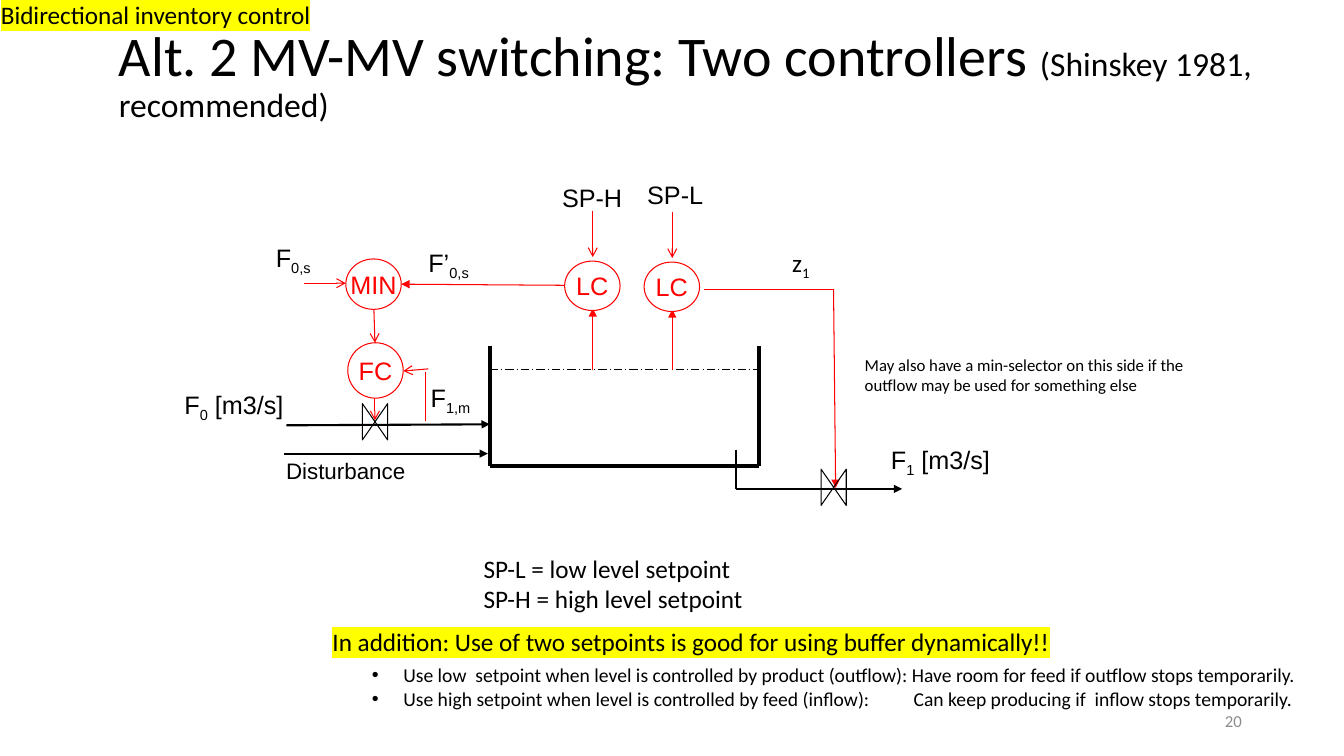
from dataclasses import dataclass

from lxml.etree import SubElement
from pptx import Presentation
from pptx.dml.color import RGBColor
from pptx.enum.dml import MSO_LINE_DASH_STYLE as Dash
from pptx.enum.shapes import MSO_CONNECTOR as Connector, MSO_SHAPE as Shape
from pptx.enum.text import MSO_ANCHOR as Anchor, MSO_AUTO_SIZE as Fit, PP_ALIGN as Align
from pptx.oxml.ns import qn
from pptx.util import Pt

COLORS = {"ink": "000000", "signal": "FF0000", "paper": "FFFFFF",
          "marker": "FFFF00", "number": "8C8C8C"}


@dataclass
class Line:
    points: list[tuple[float, float]]
    color: str = "signal"
    width: float = 0.75
    arrow: str = ""
    dashed: bool = False


@dataclass
class Circle:
    name: str
    left: float
    top: float
    height: float


@dataclass
class Label:
    text: str
    left: float
    top: float
    width: float
    height: float = 29
    size: float = 18
    font: str = "Arial"
    align: Align = Align.LEFT
    wrap: bool = False
    highlight: bool = False


def rgb(name: str) -> RGBColor:
    return RGBColor.from_string(COLORS[name])


def write(para, text: str, size: float = 18, font: str = "Arial",
          color: str = "ink", highlight: bool = False) -> None:
    """Add text to a paragraph; parts between underscores are subscripts."""
    for index, part in enumerate(text.split("_")):
        if not part:
            continue
        span = para.add_run()
        span.text = part
        span.font.size = Pt(size)
        span.font.name = font
        span.font.color.rgb = rgb(color)
        props = span._r.get_or_add_rPr()
        if index % 2:
            props.set("baseline", "-25000")
        if highlight:
            mark = SubElement(props, qn("a:highlight"))
            SubElement(mark, qn("a:srgbClr")).set("val", COLORS["marker"])
            props.find(qn("a:solidFill")).addnext(mark)


def add_box(page, left: float, top: float, width: float, height: float,
            wrap: bool = False, grow: bool = True):
    box = page.shapes.add_textbox(Pt(left), Pt(top), Pt(width), Pt(height))
    frame = box.text_frame
    frame.word_wrap = wrap
    frame.auto_size = Fit.SHAPE_TO_FIT_TEXT if grow else Fit.NONE
    if not grow:
        frame.vertical_anchor = Anchor.MIDDLE
    return frame


def draw_label(page, label: Label) -> None:
    frame = add_box(page, label.left, label.top, label.width, label.height, label.wrap)
    for index, text in enumerate(label.text.split("\n")):
        para = frame.add_paragraph() if index else frame.paragraphs[0]
        para.alignment = label.align
        write(para, text, label.size, label.font, highlight=label.highlight)


def draw_line(page, line: Line) -> None:
    pairs = list(zip(line.points, line.points[1:]))
    for index, (start, end) in enumerate(pairs, 1):
        wire = page.shapes.add_connector(Connector.STRAIGHT, *map(Pt, start + end))
        wire.line.color.rgb = rgb(line.color)
        wire.line.width = Pt(line.width)
        if line.dashed:
            wire.line.dash_style = Dash.LONG_DASH_DOT
        if line.arrow and index == len(pairs):
            SubElement(wire.line._get_or_add_ln(), qn("a:tailEnd")).set("type", line.arrow)
        SubElement(wire._element.spPr, qn("a:effectLst"))


def add_outline(page, kind: Shape, left: float, top: float, width: float,
                height: float, color: str):
    shape = page.shapes.add_shape(kind, Pt(left), Pt(top), Pt(width), Pt(height))
    shape.shadow.inherit = False
    shape.fill.background()
    shape.line.color.rgb = rgb(color)
    shape.line.width = Pt(0.75)
    return shape


def draw_circle(page, circle: Circle) -> None:
    shape = add_outline(page, Shape.OVAL, circle.left, circle.top, 39.6,
                        circle.height, "signal")
    shape.fill.solid()
    shape.fill.fore_color.rgb = rgb("paper")
    frame = shape.text_frame
    frame.word_wrap = False
    frame.vertical_anchor = Anchor.MIDDLE
    frame.paragraphs[0].alignment = Align.CENTER
    write(frame.paragraphs[0], circle.name, color="signal")


def draw_bullets(page, texts: list[str]) -> None:
    frame = add_box(page, 258.5, 470.2, 677.5, 41)
    for index, text in enumerate(texts):
        para = frame.add_paragraph() if index else frame.paragraphs[0]
        props = para._p.get_or_add_pPr()
        props.set("marL", str(Pt(22.5)))
        props.set("indent", str(-Pt(22.5)))
        SubElement(props, qn("a:buFont")).set("typeface", "Arial")
        SubElement(props, qn("a:buChar")).set("char", "•")
        stop = SubElement(SubElement(props, qn("a:tabLst")), qn("a:tab"))
        stop.set("pos", str(Pt(387)))
        stop.set("algn", "l")
        write(para, text, 14, "Calibri")


LEVEL, TANK_LEFT, TANK_RIGHT = 264.2, 350, 542.2
LOOPS = [(480.2, 187.2), (423.4, 186.5)]  # level controllers: centre x, top

LINES = [
    # Tank and flows
    Line([(TANK_LEFT, 247), (TANK_LEFT, 332.6)], "ink", 3),
    Line([(TANK_LEFT, 332.6), (TANK_RIGHT, 332.6)], "ink", 3),
    Line([(TANK_RIGHT, 247), (TANK_RIGHT, 332.6)], "ink", 3),
    Line([(TANK_LEFT, LEVEL), (TANK_RIGHT, LEVEL)], "ink", dashed=True),
    Line([(203, 324), (348.5, 324)], "ink", 1.5, "triangle"),
    Line([(204.5, 303.8), (349.9, 303.1)], "ink", 1.5, "triangle"),
    Line([(525.6, 321.1), (525.6, 349.2), (644.4, 349.2)], "ink", 1.5, "triangle"),
    # Control signals
    Line([(502.6, 206.6), (595.4, 206.6), (596.9, 348.5)], arrow="triangle"),
    Line([(303.8, 301), (303.8, 265.7)]),
    Line([(306, 263.5), (288, 265)], arrow="arrow"),
    Line([(267.8, 284.4), (267.8, 300.2)], arrow="arrow"),
    Line([(267.1, 221), (267.8, 244.8)], arrow="arrow"),
    Line([(403.2, 203.8), (286.6, 203)], arrow="triangle"),
    Line([(217.4, 202.3), (247, 202.3)], arrow="arrow"),
]
for x, top in LOOPS:
    LINES += [Line([(x, LEVEL), (x, top + 33.8)], width=1, arrow="triangle"),
              Line([(x, top - 36), (x, top - 2.9)], arrow="arrow")]

CIRCLES = [Circle("LC", x - 20.1, top, 35.3) for x, top in LOOPS]
CIRCLES += [Circle("FC", 248.4, 244.8, 39.6), Circle("MIN", 247, 185, 36)]
VALVES = [(582.5, 339.1), (254.9, 292.3)]

LABELS = [
    Label("Disturbance", 197.3, 323.3, 100.8, 26.6, 16),
    Label("SP-L", 455, 124.6, 54.7, align=Align.CENTER),
    Label("SP-H", 393.8, 126.7, 58.3, align=Align.CENTER),
    Label("F_1,m_", 298.8, 269.3, 46, align=Align.CENTER),
    Label("F_0,s_", 188.6, 169.2, 41.8, align=Align.CENTER),
    Label("F’_0,s_", 297.4, 172.8, 46, align=Align.CENTER),
    Label("F_0_ [m3/s]", 124.6, 274.3, 87.1),
    Label("F_1_ [m3/s]", 629.3, 313.9, 87.1),
    Label("z_1_", 558.7, 172.8, 28, font="Calibri"),
    Label("SP-L = low level setpoint\nSP-H = high level setpoint",
          338.4, 391.7, 202.3, 51, font="Calibri"),
    Label("In addition: Use of two setpoints is good for using buffer dynamically!!",
          230.4, 443.5, 530, font="Calibri", wrap=True, highlight=True),
    Label("Bidirectional inventory control", -6.5, -4.3, 238.3,
          font="Calibri", highlight=True),
    Label("May also have a min-selector on this side if the outflow may be used "
          "for something else", 610.6, 249.8, 264.2, 36, 12, "Calibri", wrap=True),
]
BULLETS = [
    "Use low  setpoint when level is controlled by product (outflow): "
    "Have room for feed if outflow stops temporarily.",
    "Use high setpoint when level is controlled by feed (inflow):\t"
    "Can keep producing if  inflow stops temporarily.",
]


def main() -> None:
    deck = Presentation()
    deck.slide_width, deck.slide_height = Pt(960), Pt(540)
    page = deck.slides.add_slide(deck.slide_layouts[6])

    # Title
    title = add_box(page, 77.8, 9.4, 850.3, 90, wrap=True, grow=False).paragraphs[0]
    title.line_spacing = 0.9
    write(title, "Alt. 2 MV-MV switching: Two controllers ", 40, "Calibri")
    write(title, "(Shinskey 1981, recommended)", 24, "Calibri")

    # Flowsheet
    for line in LINES:
        draw_line(page, line)
    for left, top in VALVES:
        add_outline(page, Shape.FLOWCHART_COLLATE, left, top, 25.9, 18, "ink").rotation = 90
    for circle in CIRCLES:
        draw_circle(page, circle)

    # Labels and notes
    for label in LABELS:
        draw_label(page, label)
    draw_bullets(page, BULLETS)

    # Page number
    number = add_box(page, 678.2, 500.4, 216, 28.8, wrap=True, grow=False).paragraphs[0]
    number.alignment = Align.RIGHT
    write(number, "20", 12, "Calibri", "number")

    deck.save("out.pptx")


if __name__ == "__main__":
    main()
